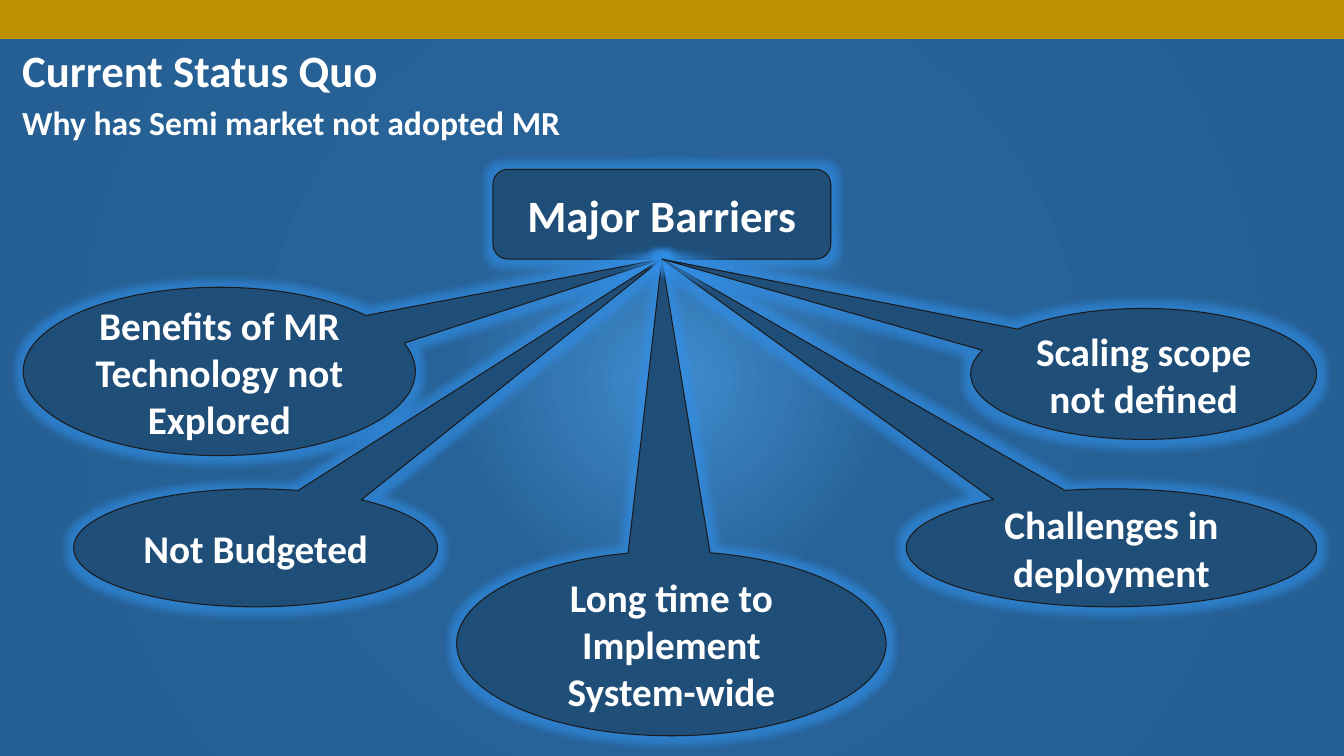
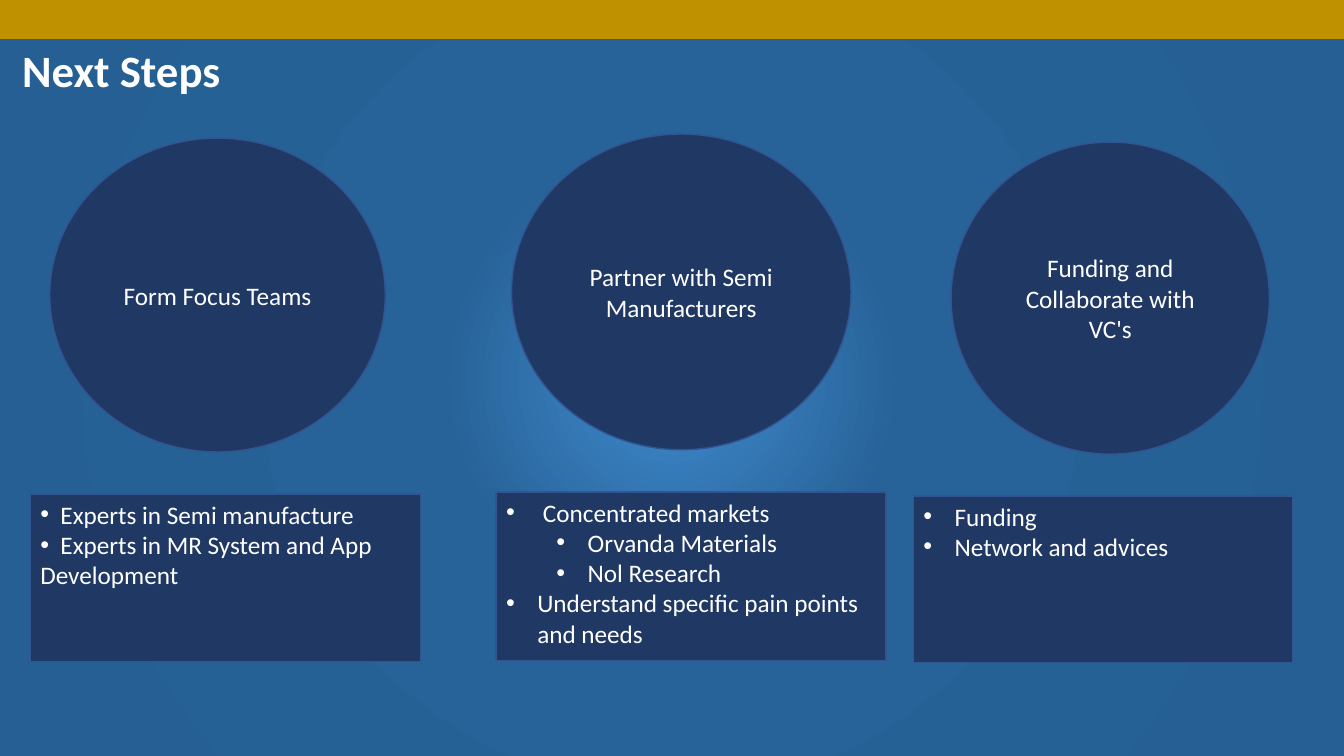
import dataclasses

import pptx
import pptx.dml.color
import pptx.enum.shapes
import pptx.enum.text
import pptx.oxml
import pptx.oxml.ns
import pptx.util

SHAPE = pptx.enum.shapes.MSO_SHAPE
ALIGN = pptx.enum.text.PP_ALIGN
ANCHOR = pptx.enum.text.MSO_ANCHOR


@dataclasses.dataclass(frozen=True)
class Theme:
    font: str = "Calibri"
    text: str = "FFFFFF"
    band: str = "BF9000"
    barrier: str = "1F4E79"
    barrier_line: str = "1A1A1A"
    glow: str = "318FE8"
    step: str = "203864"
    step_line: str = "325491"
    background: tuple = ((0, "408BCE"), (30, "276298"), (100, "255F93"))
    title_size: int = 32
    barrier_size: int = 28
    subtitle_size: int = 24
    step_size: int = 18


@dataclasses.dataclass(frozen=True)
class Box:
    """A region in percent of the slide's width and height."""
    left: float
    top: float
    width: float
    height: float

    def inner(self, left, top, width, height):
        """A region inside this one, given as shares of it."""
        return Box(self.left + left * self.width, self.top + top * self.height,
                   width * self.width, height * self.height)

    def place(self):
        return (int(SLIDE_WIDTH * self.left / 100), int(SLIDE_HEIGHT * self.top / 100),
                int(SLIDE_WIDTH * self.width / 100), int(SLIDE_HEIGHT * self.height / 100))


THEME = Theme()
SLIDE_WIDTH = pptx.util.Inches(13.33)
SLIDE_HEIGHT = pptx.util.Inches(7.5)
BAND = Box(0, 0, 100, 5.07)
TITLE = Box(0.9, 5.33, 34.65, 7.87)
SUBTITLE = Box(0.9, 12.8, 50, 6.67)
HUB = Box(36.68, 22.4, 25.13, 11.87)

BARRIERS = [
    ("Benefits of MR Technology not Explored", Box(1.73, 38, 29.18, 22.27)),
    ("Not Budgeted", Box(5.48, 64.67, 27.08, 15.6)),
    ("Long time to Implement System-wide", Box(33.98, 72.93, 31.95, 24.4)),
    ("Challenges in deployment", Box(67.43, 64.67, 30.53, 15.6)),
    ("Scaling scope not defined", Box(72.23, 40.8, 25.73, 17.33)),
]

# Heading, column, circle inside the column, hanging indent, list of (level, text)
STEPS = [
    ("Form Focus Teams", Box(2.25, 18.27, 29.03, 69.2), (0.05, 0, 0.86, 0.6), 0,
     [(0, "  Experts in Semi manufacture"),
      (0, "  Experts in MR System and App Development")]),
    ("Partner with Semi Manufacturers", Box(36.9, 17.73, 29.03, 69.6),
     (0.04, 0, 0.87, 0.6), 0.31,
     [(0, " Concentrated markets"), (1, "Orvanda Materials"), (1, "Nol Research"),
      (0, "Understand specific pain points and needs")]),
    ("Funding and Collaborate with VC's", Box(67.95, 18.8, 28.2, 68.8),
     (0.1, 0, 0.84, 0.6), 0.31,
     [(0, "Funding"), (0, "Network and advices")]),
]


def color(value):
    return pptx.dml.color.RGBColor.from_string(value)


def add_xml(parent, tag, inner="", **attributes):
    listed = " ".join(f'{name}="{value}"' for name, value in attributes.items())
    parent.append(pptx.oxml.parse_xml(
        f'<a:{tag} {pptx.oxml.ns.nsdecls("a")} {listed}>{inner}</a:{tag}>'))


def set_background(master):
    """Give every page the circular gradient."""
    master.background.fill.gradient()
    gradient = master.element.xpath(".//p:bgPr/a:gradFill")[0]
    for child in list(gradient):
        gradient.remove(child)
    stops = "".join(f'<a:gs pos="{position * 1000}"><a:srgbClr val="{value}"/></a:gs>'
                    for position, value in THEME.background)
    add_xml(gradient, "gsLst", stops)
    add_xml(gradient, "path",
            '<a:fillToRect l="50000" t="50000" r="50000" b="50000"/>', path="circle")


def paint(shape, fill, line, width=1):
    shape.fill.solid()
    shape.fill.fore_color.rgb = color(fill)
    shape.line.color.rgb = color(line)
    shape.line.width = pptx.util.Pt(width)


def add_panel(page, kind, box, fill, line, width=1):
    panel = page.shapes.add_shape(kind, *box.place())
    panel.shadow.inherit = False
    paint(panel, fill, line, width)
    return panel


def write(shape, lines, size, bold=False, align=ALIGN.LEFT, anchor=ANCHOR.MIDDLE,
          side=0.1, edge=0.05):
    frame = shape.text_frame
    frame.text = "\n".join(lines)
    frame.word_wrap = True
    frame.auto_size = pptx.enum.text.MSO_AUTO_SIZE.NONE
    frame.vertical_anchor = anchor
    frame.margin_left = frame.margin_right = pptx.util.Inches(side)
    frame.margin_top = frame.margin_bottom = pptx.util.Inches(edge)
    for para in frame.paragraphs:
        para.alignment = align
        para.space_before = pptx.util.Pt(0)
        for span in para.runs:
            span.font.name = THEME.font
            span.font.size = pptx.util.Pt(size)
            span.font.bold = bold
            span.font.color.rgb = color(THEME.text)


def move(shape, box):
    shape.left, shape.top, shape.width, shape.height = box.place()


def set_indent(para, left, first):
    properties = para._p.get_or_add_pPr()
    properties.set("marL", str(pptx.util.Inches(left)))
    properties.set("indent", str(pptx.util.Inches(first)))
    return properties


def start_page(deck, layout_name, title):
    page = deck.slides.add_slide(deck.slide_layouts.get_by_name(layout_name))
    add_panel(page, SHAPE.RECTANGLE, BAND, THEME.band, THEME.band)
    move(page.shapes.title, TITLE)
    write(page.shapes.title, [title], THEME.title_size, bold=True, edge=0.1)
    return page


def remove_empty_placeholders(page):
    for holder in list(page.placeholders):
        if not holder.text_frame.text:
            holder.element.getparent().remove(holder.element)


def add_subtitle(holder, text, box):
    move(holder, box)
    write(holder, [text], THEME.subtitle_size, bold=True, anchor=ANCHOR.TOP)
    add_xml(set_indent(holder.text_frame.paragraphs[0], 0, 0), "buNone")


def add_barrier(page, kind, text, box, size):
    panel = add_panel(page, kind, box, THEME.barrier, THEME.barrier_line, 0.75)
    write(panel, [text], size, bold=True, align=ALIGN.CENTER, edge=0.1)
    effects = panel.element.spPr.find(pptx.oxml.ns.qn("a:effectLst"))
    add_xml(effects, "glow",
            f'<a:srgbClr val="{THEME.glow}"><a:alpha val="60000"/></a:srgbClr>',
            rad=pptx.util.Pt(11))
    return panel


def add_callout(page, text, box, tip):
    """Add an ellipse whose pointer ends at tip, a point in percent."""
    callout = add_barrier(page, SHAPE.OVAL_CALLOUT, text, box, THEME.barrier_size)
    callout.adjustments[0] = (tip[0] - box.left) / box.width - 0.5
    callout.adjustments[1] = (tip[1] - box.top) / box.height - 0.5


def add_step(page, holder, heading, column, circle, hanging, items):
    """Fill a column with a circle above a bulleted list."""
    disc = add_panel(page, SHAPE.OVAL, column.inner(*circle), THEME.step, THEME.step_line)
    write(disc, [heading], THEME.step_size, align=ALIGN.CENTER)
    move(holder, column.inner(0, 0.68, 1, 0.32))
    paint(holder, THEME.step, THEME.step_line)
    write(holder, [text for _, text in items], THEME.step_size, anchor=ANCHOR.TOP)
    for para, (level, _) in zip(holder.text_frame.paragraphs, items):
        para.level = level
        properties = set_indent(para, hanging + 0.5 * level, -hanging)
        add_xml(properties, "buFont", typeface="Arial")
        add_xml(properties, "buChar", char="•")


def build_barriers(deck):
    page = start_page(deck, "Title and Content", "Current Status Quo")
    add_subtitle(page.placeholders[1], "Why has Semi market not adopted MR", SUBTITLE)
    add_barrier(page, SHAPE.ROUNDED_RECTANGLE, "Major Barriers", HUB, THEME.title_size)
    tip = (HUB.left + HUB.width / 2, HUB.top + HUB.height)
    for text, box in BARRIERS:
        add_callout(page, text, box, tip)


def build_next_steps(deck):
    page = start_page(deck, "Comparison", "Next Steps")
    bodies = [holder for holder in page.placeholders
              if holder.placeholder_format.idx > 0]
    for holder, step in zip(bodies, STEPS):
        add_step(page, holder, *step)
    remove_empty_placeholders(page)


def main():
    deck = pptx.Presentation()
    deck.slide_width, deck.slide_height = SLIDE_WIDTH, SLIDE_HEIGHT
    set_background(deck.slide_master)
    build_barriers(deck)
    build_next_steps(deck)
    deck.save("out.pptx")


if __name__ == "__main__":
    main()
